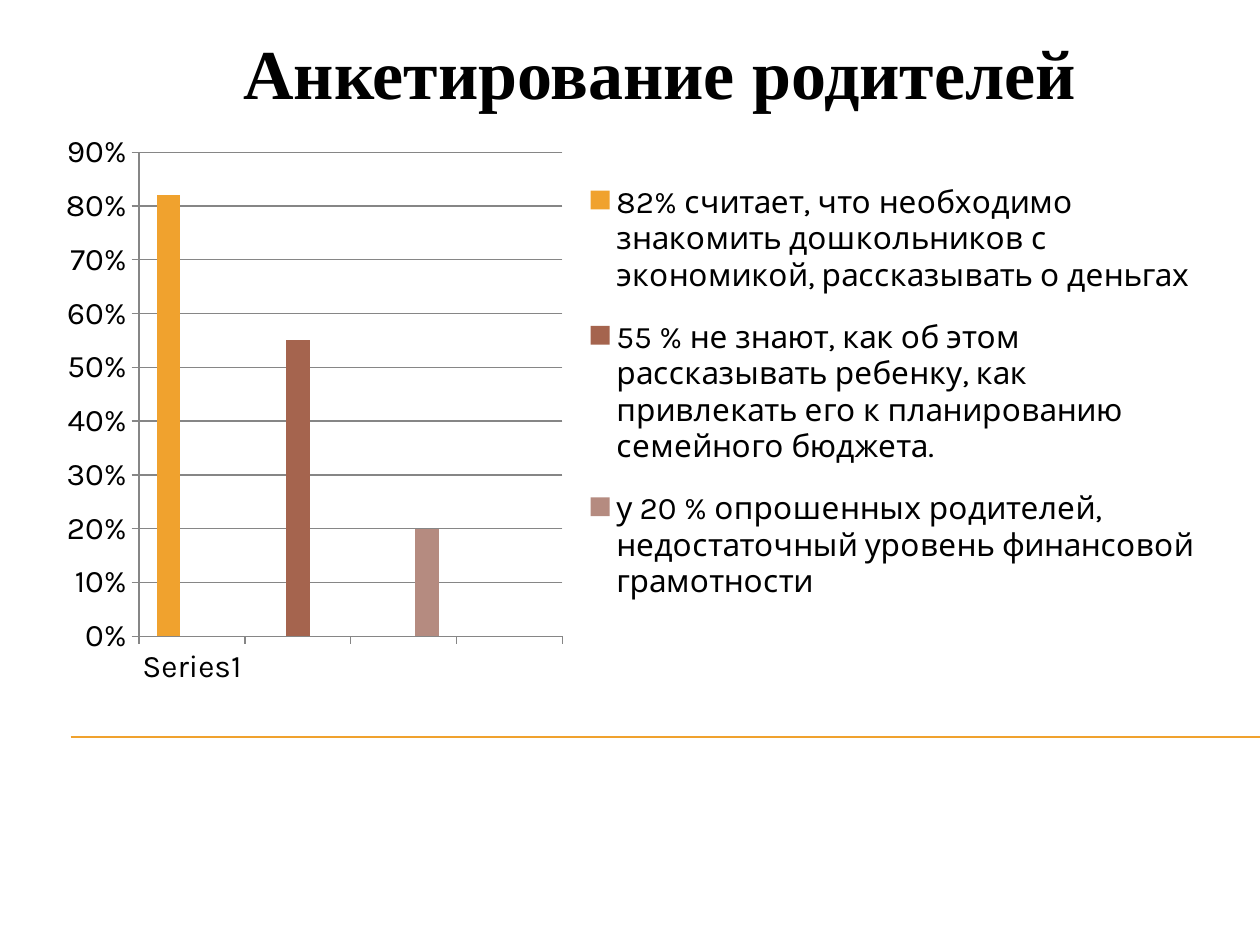
import pptx
import pptx.util
import pptx.chart.data
import pptx.dml.color
import pptx.enum.chart
import pptx.enum.shapes
import pptx.enum.text
import pptx.oxml
import pptx.oxml.ns

WIDTH, HEIGHT = 10, 7.5
COLORS = {"text": "000000", "rule": "F0A22E", "grid": "868686"}
ANSWERS = [
    ("82% считает, что необходимо знакомить дошкольников с экономикой, "
     "рассказывать о деньгах", 0.82, "F0A22E"),
    ("55 % не знают, как об этом рассказывать ребенку, как привлекать его "
     "к планированию семейного бюджета.", 0.55, "A5644E"),
    ("у 20 % опрошенных родителей, недостаточный уровень финансовой "
     "грамотности", 0.2, "B58B80"),
]
CATEGORIES = ["Series1", "", "", ""]


def rgb(value):
    return pptx.dml.color.RGBColor.from_string(value)


def box(x, y, w, h):
    return [pptx.util.Inches(n) for n in (x * WIDTH, y * HEIGHT, w * WIDTH, h * HEIGHT)]


def style_font(font, name, size, bold=False):
    font.name = name
    font.size = pptx.util.Pt(size)
    font.bold = bold
    font.color.rgb = rgb(COLORS["text"])


def add_rule(slide, x1, x2, y):
    left, top, width, _ = box(x1, y, x2 - x1, 0)
    line = slide.shapes.add_connector(
        pptx.enum.shapes.MSO_CONNECTOR.STRAIGHT, left, top, left + width, top)
    line.line.color.rgb = rgb(COLORS["rule"])
    line.line.width = pptx.util.Pt(0.75)
    line._element.spPr.append(pptx.oxml.parse_xml(
        f'<a:effectLst {pptx.oxml.ns.nsdecls("a")}/>'))


def set_title(slide, text):
    sp = slide.shapes.title
    sp.left, sp.top, sp.width, sp.height = box(0.169, 0.025, 0.709, 0.103)
    tf = sp.text_frame
    tf.word_wrap = True
    tf.vertical_anchor = pptx.enum.text.MSO_ANCHOR.TOP
    p = tf.paragraphs[0]
    p.alignment = pptx.enum.text.PP_ALIGN.CENTER
    r = p.add_run()
    r.text = text
    style_font(r.font, "Times New Roman", 40, True)


def set_layout(element, x, y, w, h, inner=False):
    target = '<c:layoutTarget val="inner"/>' if inner else ""
    sizes = "".join(f'<c:{tag} val="{value}"/>'
                    for tag, value in zip("xywh", (x, y, w, h)))
    layout = pptx.oxml.parse_xml(
        f'<c:layout {pptx.oxml.ns.nsdecls("c")}><c:manualLayout>{target}'
        f'<c:xMode val="edge"/><c:yMode val="edge"/>{sizes}'
        '</c:manualLayout></c:layout>')
    for old in element.findall(pptx.oxml.ns.qn("c:layout")):
        element.remove(old)
    element.insert(0 if inner else 1, layout)


def style_axes(chart):
    outside = pptx.enum.chart.XL_TICK_MARK.OUTSIDE
    axis = chart.value_axis
    axis.minimum_scale, axis.maximum_scale, axis.major_unit = 0, 0.9, 0.1
    axis.has_major_gridlines = True
    axis.tick_labels.number_format = "0%"
    axis.tick_labels.number_format_is_linked = False
    for a in (axis, chart.category_axis):
        a.major_tick_mark = outside
    for fmt in (axis.format, chart.category_axis.format, axis.major_gridlines.format):
        fmt.line.color.rgb = rgb(COLORS["grid"])
        fmt.line.width = pptx.util.Pt(0.75)


def add_answer_chart(slide):
    data = pptx.chart.data.CategoryChartData(number_format="0%")
    data.categories = CATEGORIES
    for i, (name, value, _) in enumerate(ANSWERS):
        data.add_series(name, [value if i == j else None for j in range(len(CATEGORIES))])
    chart = slide.shapes.add_chart(
        pptx.enum.chart.XL_CHART_TYPE.COLUMN_CLUSTERED,
        *box(0.032, 0.133, 0.933, 0.592), data).chart
    style_font(chart.font, "Karla", 18)
    chart.has_title = False
    style_axes(chart)
    plot = chart.plots[0]
    plot.gap_width = 150
    plot.vary_by_categories = False
    for series, (_, _, color) in zip(plot.series, ANSWERS):
        series.format.fill.solid()
        series.format.fill.fore_color.rgb = rgb(color)
    chart.has_legend = True
    chart.legend.position = pptx.enum.chart.XL_LEGEND_POSITION.RIGHT
    chart.legend.include_in_layout = False
    set_layout(chart._chartSpace.chart.plotArea, 0.084, 0.048, 0.36, 0.87, inner=True)
    set_layout(chart.legend._element, 0.46, 0.06, 0.53, 0.84)


def main():
    prs = pptx.Presentation()
    prs.slide_width = pptx.util.Inches(WIDTH)
    prs.slide_height = pptx.util.Inches(HEIGHT)
    slide = prs.slides.add_slide(prs.slide_layouts[5])
    add_rule(slide, 0.056, 1, 0.78)
    set_title(slide, "Анкетирование родителей")
    add_answer_chart(slide)
    prs.save("out.pptx")


if __name__ == "__main__":
    main()
